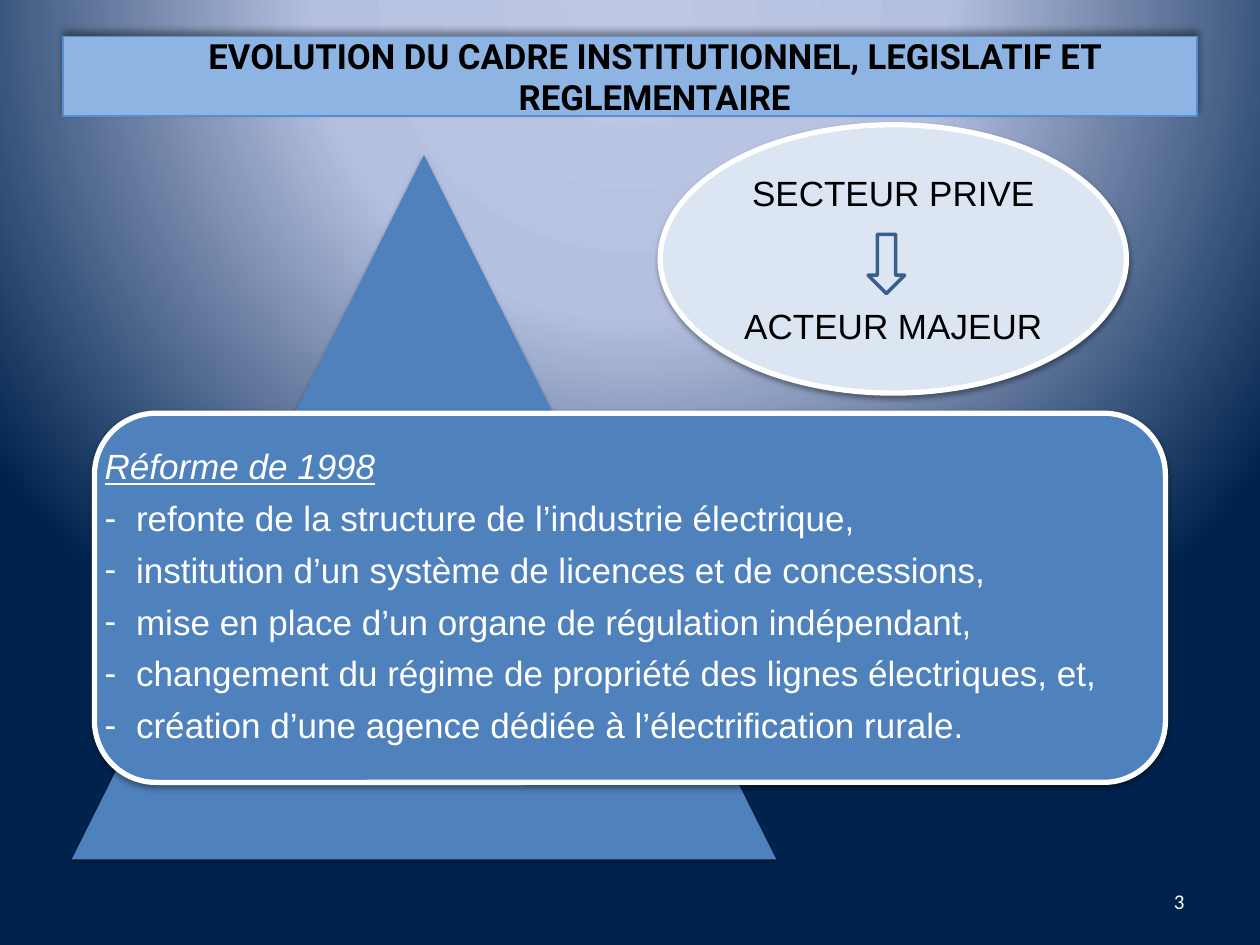
"""Builds the slide on the evolution of the institutional framework."""
from typing import NamedTuple, Optional

from lxml import etree
from pptx import Presentation
from pptx import util as u
from pptx.dml.color import RGBColor
from pptx.enum import shapes, text
from pptx.oxml import parse_xml
from pptx.oxml.ns import nsdecls, qn

COLORS = {
    "banner": "8EB4E3", "banner_line": "558ED5", "blue": "4F81BD",
    "pale": "DCE6F2", "arrow_line": "3A5F8C", "white": "FFFFFF", "black": "000000",
    "sky": "BFC9E5", "haze": "B5C0E0", "night": "00234D",
}
REFORMS = (
    "refonte de la structure de l’industrie électrique,",
    "institution d’un système de licences et de concessions,",
    "mise en place d’un organe de régulation indépendant,",
    "changement du régime de propriété des lignes électriques, et,",
    "création d’une agence dédiée à l’électrification rurale.",
)


class Area(NamedTuple):
    left: float
    top: float
    width: float
    height: float

    def lengths(self):
        return [u.Inches(value) for value in self]


class Shadow(NamedTuple):
    alpha: int
    blur: float
    distance: float
    angle: int = 90


class Figure(NamedTuple):
    kind: shapes.MSO_SHAPE
    area: Area
    fill: str
    line: Optional[str] = None
    width: float = 0
    shadow: Optional[Shadow] = None


SOFT = Shadow(38, 3.1, 1.6)
PANEL = Area(0.75, 3.28, 8.5, 2.93)
TRIANGLE = Figure(shapes.MSO_SHAPE.ISOSCELES_TRIANGLE, Area(0.57, 1.23, 5.59, 5.59),
                  "blue", shadow=Shadow(35, 3.1, 1.8))
REFORM_PANEL = Figure(shapes.MSO_SHAPE.ROUNDED_RECTANGLE, PANEL, "blue", "white", 3, SOFT)
SECTOR = Figure(shapes.MSO_SHAPE.OVAL, Area(5.24, 0.99, 3.7, 2.13), "pale", "white", 3, SOFT)
ARROW = Figure(shapes.MSO_SHAPE.DOWN_ARROW, Area(6.89, 1.86, 0.29, 0.47),
               "pale", "arrow_line", 2)


def rgb(name: str) -> RGBColor:
    return RGBColor.from_string(COLORS[name])


def paint_background(slide) -> None:
    slide.background.fill.gradient()
    gradient = slide.element.find(".//" + qn("a:gradFill"))
    stops = "".join(
        f'<a:gs pos="{position * 1000}"><a:srgbClr val="{COLORS[name]}"/></a:gs>'
        for position, name in ((0, "sky"), (40, "haze"), (100, "night")))
    gradient.getparent().replace(gradient, parse_xml(
        f'<a:gradFill {nsdecls("a")} rotWithShape="1"><a:gsLst>{stops}</a:gsLst>'
        '<a:path path="circle"><a:fillToRect l="50000" t="-80000" r="50000" b="180000"/>'
        '</a:path></a:gradFill>'))


def place(box, area: Area) -> None:
    box.left, box.top, box.width, box.height = area.lengths()


def style(box, fill: str, line: Optional[str], width: float, shadow: Optional[Shadow]) -> None:
    box.fill.solid()
    box.fill.fore_color.rgb = rgb(fill)
    if line:
        box.line.color.rgb = rgb(line)
        box.line.width = u.Pt(width)
    else:
        box.line.fill.background()
    box.shadow.inherit = False
    if shadow:
        effects = box.element.spPr.find(qn("a:effectLst"))
        effects.append(parse_xml(
            f'<a:outerShdw {nsdecls("a")} blurRad="{u.Pt(shadow.blur)}" '
            f'dist="{u.Pt(shadow.distance)}" dir="{shadow.angle * 60000}" rotWithShape="0">'
            f'<a:srgbClr val="{COLORS["black"]}"><a:alpha val="{shadow.alpha * 1000}"/>'
            '</a:srgbClr></a:outerShdw>'))


def draw(slide, figure: Figure):
    box = slide.shapes.add_shape(figure.kind, *figure.area.lengths())
    style(box, figure.fill, figure.line, figure.width, figure.shadow)
    return box


def prepare_frame(box):
    frame = box.text_frame
    frame.word_wrap = True
    frame.auto_size = text.MSO_AUTO_SIZE.NONE
    frame.vertical_anchor = text.MSO_ANCHOR.MIDDLE
    return frame


def write(para, words: str, *, size: float = 20, font: str = "Arial", color: str = "white",
          bold: bool = False, italic: bool = False, underline: bool = False,
          align=text.PP_ALIGN.LEFT, before: float = 0, after: float = 0,
          spacing: float = 1.0) -> None:
    para.alignment = align
    para.space_before, para.space_after = u.Pt(before), u.Pt(after)
    para.line_spacing = spacing
    span = para.add_run()
    span.text = words
    span.font.size, span.font.name = u.Pt(size), font
    span.font.bold, span.font.italic, span.font.underline = bold, italic, underline
    span.font.color.rgb = rgb(color)


def indent(para, margin: float, bullet: Optional[str] = None) -> None:
    properties = para._p.get_or_add_pPr()
    properties.set("marL", str(u.Inches(margin)))
    properties.set("indent", str(-u.Inches(margin) if bullet else 0))
    if bullet:
        etree.SubElement(properties, qn("a:buFont"), typeface="Arial")
        etree.SubElement(properties, qn("a:buChar"), char=bullet)
    else:
        etree.SubElement(properties, qn("a:buNone"))


def add_title(slide) -> None:
    title = slide.shapes.title
    place(title, Area(0.5, 0.29, 9, 0.63))
    style(title, "banner", "banner_line", 0.75, Shadow(40, 4, 3, 270))
    para = prepare_frame(title).paragraphs[0]
    write(para, "EVOLUTION DU CADRE INSTITUTIONNEL, LEGISLATIF ET REGLEMENTAIRE",
          size=19.8, font="Roboto", color="black", bold=True, align=text.PP_ALIGN.CENTER)
    indent(para, 0.39)


def add_reforms(slide) -> None:
    draw(slide, REFORM_PANEL)
    body = slide.placeholders[1]
    body.element.getparent().append(body.element)
    place(body, PANEL)
    frame = prepare_frame(body)
    frame.margin_left = frame.margin_right = u.Inches(0.08)
    frame.margin_top = frame.margin_bottom = u.Inches(0.08)
    heading = frame.paragraphs[0]
    write(heading, "Réforme de 1998", italic=True, underline=True, after=8, spacing=0.9)
    indent(heading, 0)
    for reform in REFORMS:
        para = frame.add_paragraph()
        write(para, reform, after=8, spacing=0.9)
        indent(para, 0.25, "-")


def add_sector(slide) -> None:
    frame = prepare_frame(draw(slide, SECTOR))
    for para, words, before in ((frame.paragraphs[0], "SECTEUR PRIVE", 0),
                                (frame.add_paragraph(), "ACTEUR MAJEUR", 52)):
        write(para, words, color="black", align=text.PP_ALIGN.CENTER, before=before)
    draw(slide, ARROW)


def add_page_number(slide) -> None:
    box = slide.shapes.add_textbox(*Area(7.17, 6.95, 2.33, 0.4).lengths())
    write(prepare_frame(box).paragraphs[0], "3", size=12, font="Calibri",
          align=text.PP_ALIGN.RIGHT)


def main() -> None:
    deck = Presentation()
    deck.slide_width, deck.slide_height = u.Inches(10), u.Inches(7.5)
    slide = deck.slides.add_slide(deck.slide_layouts[1])
    paint_background(slide)
    add_title(slide)
    draw(slide, TRIANGLE)
    add_reforms(slide)
    add_page_number(slide)
    add_sector(slide)
    deck.save("out.pptx")


if __name__ == "__main__":
    main()
